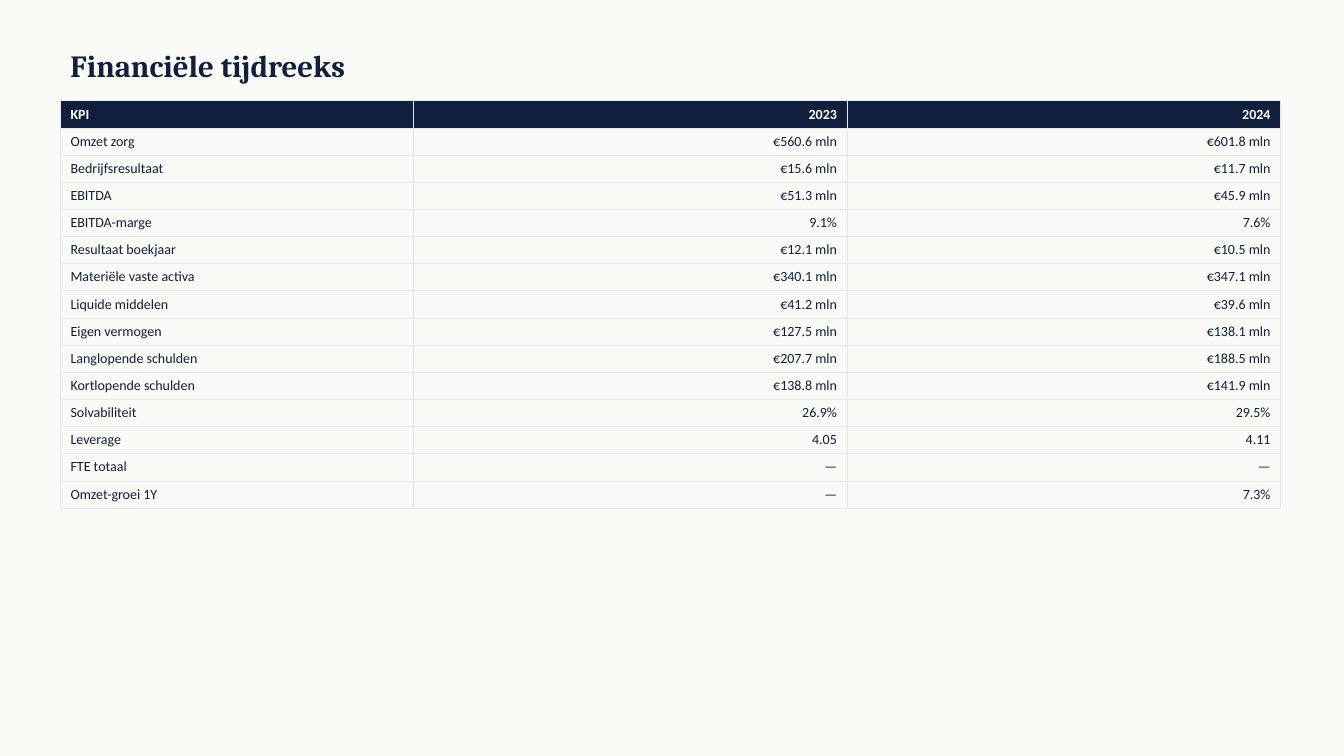
"""Build the slide with the financial time series table."""
from lxml import etree
from pptx import Presentation
from pptx import util as u
from pptx.dml.color import RGBColor
from pptx.enum import text
from pptx.oxml import ns

NAVY, WHITE, PAPER, RULE = "0F1F3D", "FFFFFF", "FAFAF7", "E5E7EB"
TITLE = "Financiële tijdreeks"
HEADER = ("KPI", "2023", "2024")
KPIS = [
    ("Omzet zorg", "€560.6 mln", "€601.8 mln"),
    ("Bedrijfsresultaat", "€15.6 mln", "€11.7 mln"),
    ("EBITDA", "€51.3 mln", "€45.9 mln"),
    ("EBITDA-marge", "9.1%", "7.6%"),
    ("Resultaat boekjaar", "€12.1 mln", "€10.5 mln"),
    ("Materiële vaste activa", "€340.1 mln", "€347.1 mln"),
    ("Liquide middelen", "€41.2 mln", "€39.6 mln"),
    ("Eigen vermogen", "€127.5 mln", "€138.1 mln"),
    ("Langlopende schulden", "€207.7 mln", "€188.5 mln"),
    ("Kortlopende schulden", "€138.8 mln", "€141.9 mln"),
    ("Solvabiliteit", "26.9%", "29.5%"),
    ("Leverage", "4.05", "4.11"),
    ("FTE totaal", "—", "—"),
    ("Omzet-groei 1Y", "—", "7.3%"),
]
COLUMN_WIDTHS = (3.5, 4.3, 4.3)
TABLE_HEIGHT = 4.04
TITLE_FONT = {"name": "Cambria", "size": u.Pt(22), "bold": True}
HEADER_FONT = {"name": "Calibri", "size": u.Pt(10), "bold": True}
KPI_FONT = {**HEADER_FONT, "bold": False}


def paint(fill, color):
    fill.solid()
    fill.fore_color.rgb = RGBColor.from_string(color)


def write(frame, words, font, color, align=text.PP_ALIGN.LEFT):
    paragraph = frame.paragraphs[0]
    paragraph.alignment = align
    run = paragraph.add_run()
    run.text = words
    for key, value in font.items():
        setattr(run.font, key, value)
    paint(run.font.fill, color)


def rule_cell(cell):
    properties = cell._tc.get_or_add_tcPr()
    for position, side in enumerate(("lnL", "lnR", "lnT", "lnB")):
        edge = etree.Element(ns.qn(f"a:{side}"), w=str(u.Pt(0.5)))
        solid = etree.SubElement(edge, ns.qn("a:solidFill"))
        etree.SubElement(solid, ns.qn("a:srgbClr"), val=RULE)
        properties.insert(position, edge)


def add_title(slide):
    box = slide.shapes.add_textbox(*map(u.Inches, (0.6, 0.4, 12, 0.5)))
    frame = box.text_frame
    frame.word_wrap = True
    frame.vertical_anchor = text.MSO_ANCHOR.MIDDLE
    write(frame, TITLE, TITLE_FONT, NAVY)


def add_kpi_table(slide):
    lines = [HEADER, *KPIS]
    place = map(u.Inches, (0.6, 1, sum(COLUMN_WIDTHS), TABLE_HEIGHT))
    table = slide.shapes.add_table(len(lines), len(HEADER), *place).table
    table.horz_banding = False
    for column, width in zip(table.columns, COLUMN_WIDTHS):
        column.width = u.Inches(width)
    for row, line in enumerate(lines):
        font, color = (KPI_FONT, NAVY) if row else (HEADER_FONT, WHITE)
        for col, words in enumerate(line):
            cell = table.cell(row, col)
            align = text.PP_ALIGN.RIGHT if col else text.PP_ALIGN.LEFT
            write(cell.text_frame, words, font, color, align)
            if row:
                cell.fill.background()
            else:
                paint(cell.fill, NAVY)
            rule_cell(cell)


def main():
    deck = Presentation()
    deck.slide_width, deck.slide_height = u.Inches(13.33), u.Inches(7.5)
    slide = deck.slides.add_slide(deck.slide_layouts[6])
    paint(slide.background.fill, PAPER)
    add_title(slide)
    add_kpi_table(slide)
    deck.save("out.pptx")


if __name__ == "__main__":
    main()
